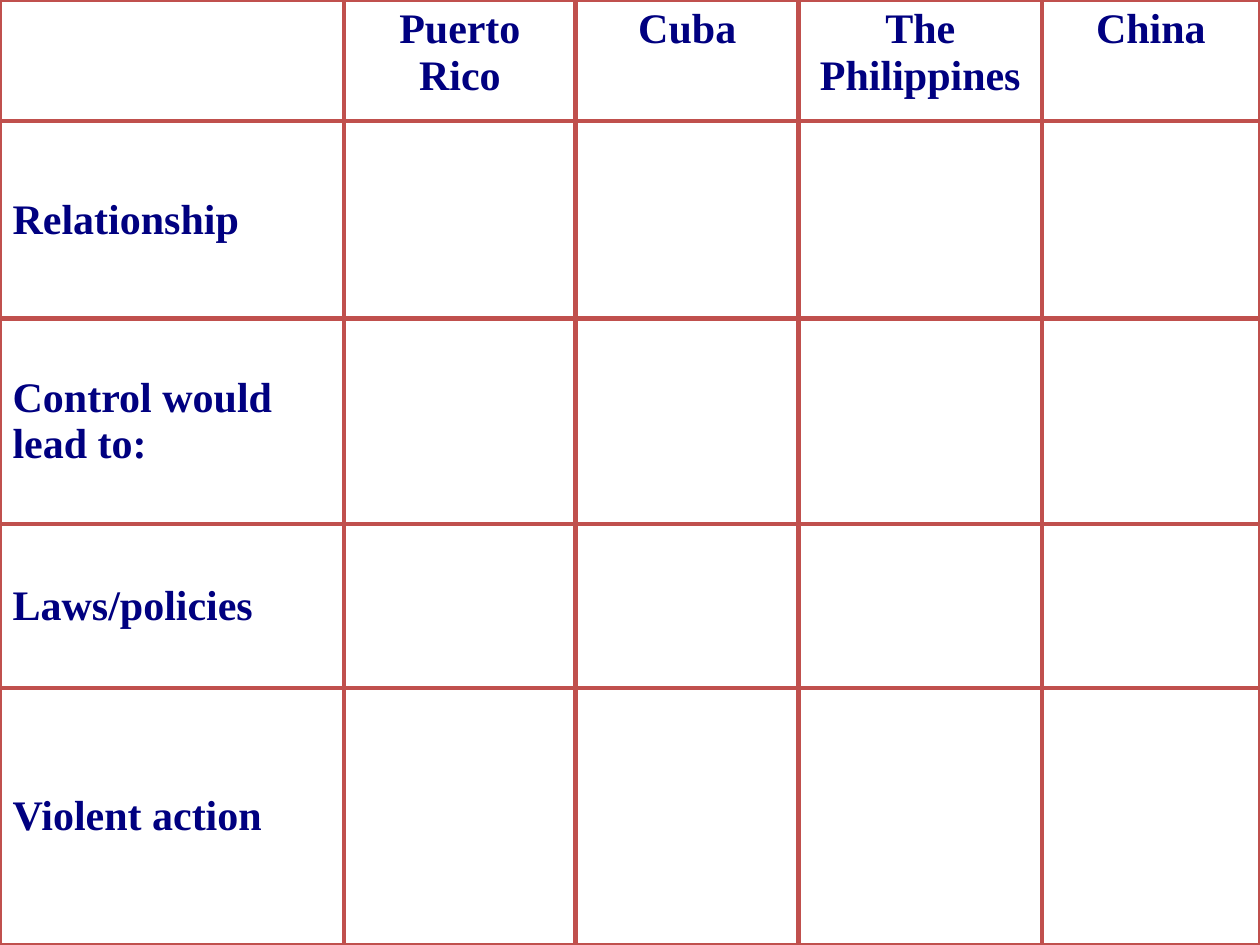
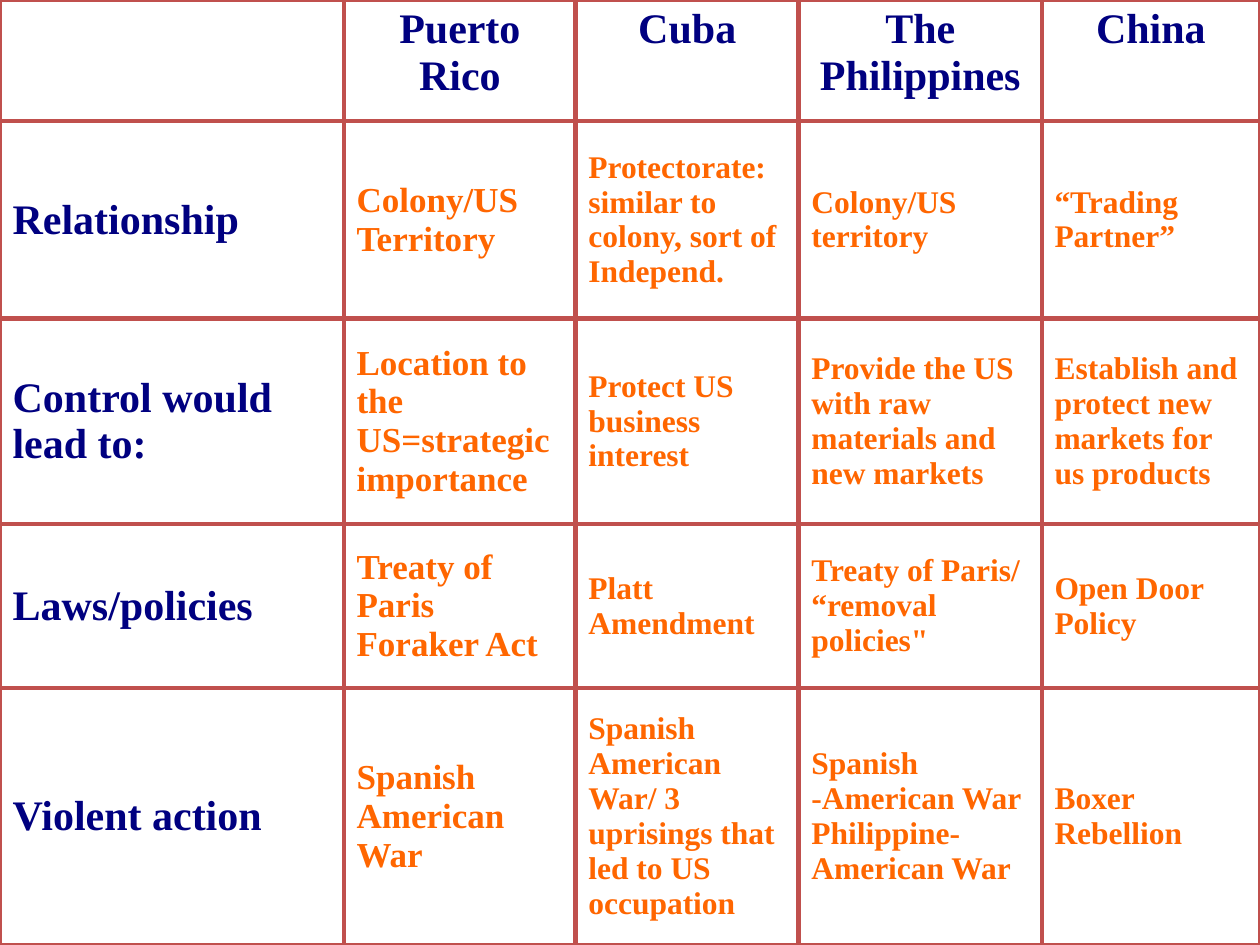
from lxml.etree import SubElement as Sub
from pptx import Presentation
from pptx.dml.color import RGBColor
from pptx.enum.text import MSO_ANCHOR as Anchor, PP_ALIGN as Align
from pptx.oxml.ns import qn
from pptx.util import Inches, Pt

FONT = "Times New Roman"
NAVY, ORANGE, RED, WHITE = "000080", "FF6600", "C0504D", "FFFFFF"
WIDTHS = [2.73, 1.84, 1.77, 1.93, 1.73]
HEIGHTS = [0.96, 1.57, 1.63, 1.3, 2.04]
PLACES = ["Puerto Rico", "Cuba", "The Philippines", "China"]
TOPICS = ["Relationship", "Control would lead to:", "Laws/policies", "Violent action"]
SIZES = [20, 18, 18, 18]
FACTS = [
    ["Colony/US Territory",
     "Protectorate: similar to colony, sort of Independ.",
     "Colony/US territory",
     "“Trading Partner”"],
    ["Location to the US=strategic importance",
     "Protect US business interest",
     "Provide the US with raw materials and new markets",
     "Establish and protect new markets for us products"],
    ["Treaty of Paris\nForaker Act",
     "Platt Amendment",
     "Treaty of Paris/ “removal policies\"",
     "Open Door Policy"],
    ["Spanish American War",
     "Spanish American War/ 3 uprisings that led to US occupation",
     "Spanish -American War\nPhilippine-American War",
     "Boxer Rebellion"],
]


def color(code):
    return RGBColor.from_string(code)


def frame(cell):
    props = cell._tc.get_or_add_tcPr()
    for side in ("lnL", "lnR", "lnT", "lnB"):
        line = Sub(props, qn(f"a:{side}"), w=str(Pt(3)))
        fill = Sub(line, qn("a:solidFill"))
        Sub(fill, qn("a:srgbClr"), val=RED)
    cell.fill.solid()
    cell.fill.fore_color.rgb = color(WHITE)


def write(cell, text, size=24, hue=NAVY, align=Align.LEFT, anchor=Anchor.MIDDLE):
    cell.vertical_anchor = anchor
    body = cell.text_frame
    for i, part in enumerate(text.split("\n")):
        para = body.add_paragraph() if i else body.paragraphs[0]
        para.alignment = align
        run = para.add_run()
        run.text = part
        font = run.font
        font.name, font.size, font.bold = FONT, Pt(size), True
        font.color.rgb = color(hue)


def add_grid(slide):
    grid = slide.shapes.add_table(len(HEIGHTS), len(WIDTHS), 0, 0,
                                  Inches(10), Inches(7.5)).table
    grid.first_row = grid.horz_banding = False
    for col, width in zip(grid.columns, WIDTHS):
        col.width = Inches(width)
    for row, height in zip(grid.rows, HEIGHTS):
        row.height = Inches(height)
    for cell in grid.iter_cells():
        frame(cell)
    for c, place in enumerate(PLACES, 1):
        write(grid.cell(0, c), place, align=Align.CENTER, anchor=Anchor.TOP)
    for r, topic in enumerate(TOPICS, 1):
        write(grid.cell(r, 0), topic)
    return grid


def add_facts(grid):
    for r, facts in enumerate(FACTS, 1):
        for c, (fact, size) in enumerate(zip(facts, SIZES), 1):
            write(grid.cell(r, c), fact, size, ORANGE)


def main():
    deck = Presentation()
    deck.slide_width, deck.slide_height = Inches(10), Inches(7.5)
    blank = deck.slide_layouts[6]
    add_grid(deck.slides.add_slide(blank))
    add_facts(add_grid(deck.slides.add_slide(blank)))
    deck.save("out.pptx")


if __name__ == "__main__":
    main()
